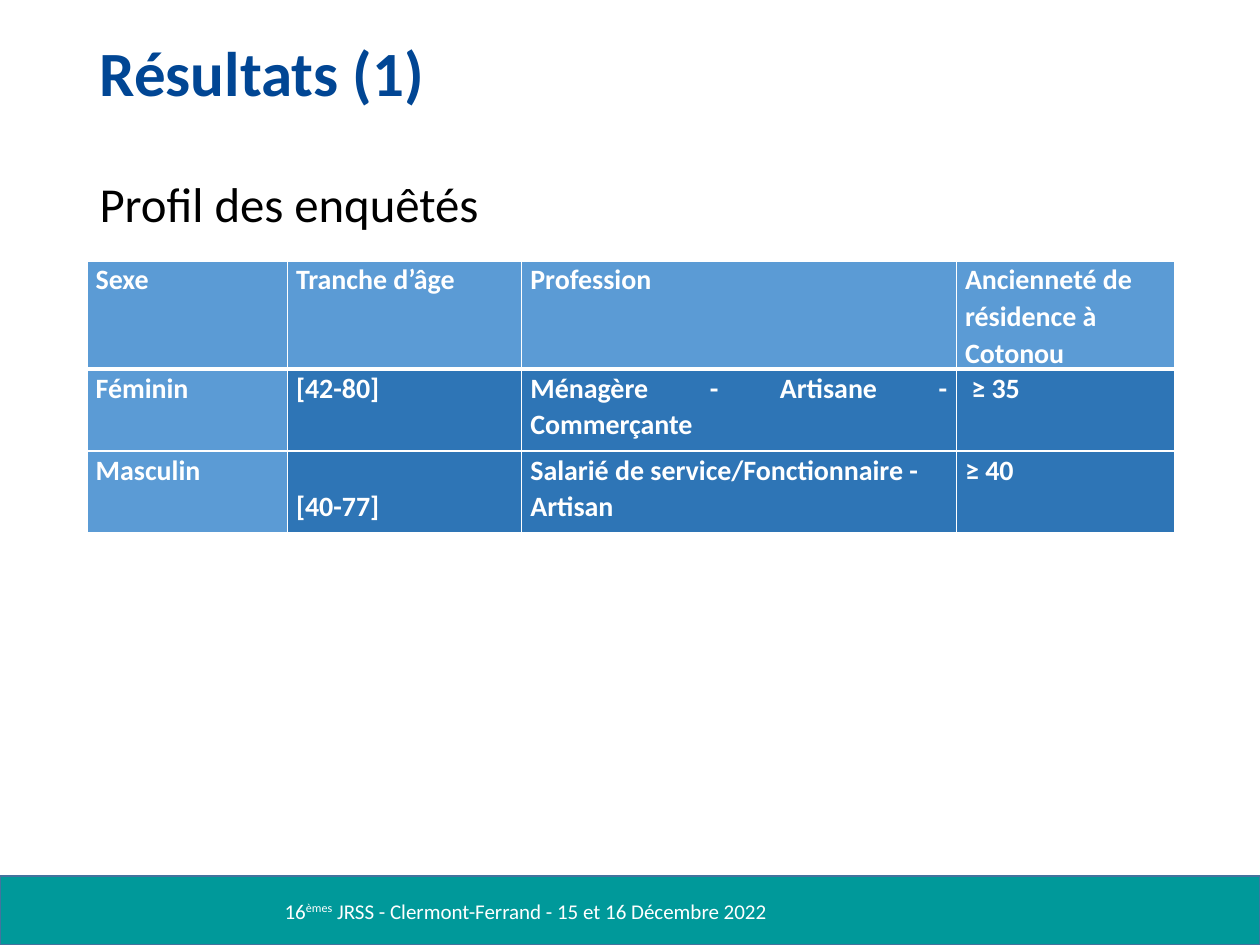
from dataclasses import dataclass

from lxml import etree
from pptx import Presentation
from pptx.dml.color import RGBColor as RGB
from pptx.enum.shapes import MSO_SHAPE as Shape
from pptx.enum.text import MSO_ANCHOR as Anchor, MSO_AUTO_SIZE as AutoSize, PP_ALIGN as Align
from pptx.oxml.ns import qn
from pptx.util import Inches, Pt


@dataclass(frozen=True)
class Theme:
    font: str = "Calibri"
    title: str = "014694"
    ink: str = "000000"
    white: str = "FFFFFF"
    band: str = "00999A"
    band_line: str = "43739E"
    header: str = "5B9BD5"
    body: str = "2E75B6"
    title_size: float = 36
    subtitle_size: float = 27.9
    table_size: float = 16
    footer_size: float = 12


class SlideBuilder:
    def __init__(self, slide, theme):
        self.slide = slide
        self.theme = theme

    def run(self, p, text, size, color, bold=False, superscript=False):
        r = p.add_run()
        r.text = text
        r.font.name = self.theme.font
        r.font.size = Pt(size)
        r.font.bold = bold
        r.font.color.rgb = RGB.from_string(color)
        if superscript:
            r._r.get_or_add_rPr().set("baseline", "30000")

    def band(self, x, y, w, h):
        sp = self.slide.shapes.add_shape(
            Shape.RECTANGLE, Inches(x), Inches(y), Inches(w), Inches(h))
        sp.shadow.inherit = False
        sp.fill.solid()
        sp.fill.fore_color.rgb = RGB.from_string(self.theme.band)
        sp.line.color.rgb = RGB.from_string(self.theme.band_line)
        sp.line.width = Pt(1)

    def footer(self, x, y, w, h, parts):
        tf = self.slide.shapes.add_textbox(
            Inches(x), Inches(y), Inches(w), Inches(h)).text_frame
        tf.word_wrap = True
        for text, superscript in parts:
            self.run(tf.paragraphs[0], text, self.theme.footer_size,
                     self.theme.white, superscript=superscript)

    def title(self, x, y, w, h, heading, subtitle):
        t = self.theme
        sp = self.slide.shapes.title
        sp.left, sp.top, sp.width, sp.height = map(Inches, (x, y, w, h))
        tf = sp.text_frame
        tf.auto_size = AutoSize.NONE
        tf.vertical_anchor = Anchor.MIDDLE
        p, sub = tf.paragraphs[0], tf.add_paragraph()
        self.run(p, heading, t.title_size, t.title, bold=True)
        self.run(sub, subtitle, t.subtitle_size, t.ink)
        sub.space_before = Pt(40)
        for para in (p, sub):
            para.alignment = Align.LEFT
            para.line_spacing = 0.9

    def border(self, cell, side, width):
        tc_pr = cell._tc.get_or_add_tcPr()
        ln = etree.SubElement(tc_pr, qn(f"a:ln{side}"), w=str(Pt(width)))
        fill = etree.SubElement(ln, qn("a:solidFill"))
        etree.SubElement(fill, qn("a:srgbClr"), val=self.theme.white)

    def cell(self, cell, text, fill, align, top_width, bottom_width):
        for side, width in (("L", 1), ("R", 1), ("T", top_width), ("B", bottom_width)):
            self.border(cell, side, width)
        cell.fill.solid()
        cell.fill.fore_color.rgb = RGB.from_string(fill)
        cell.margin_left = cell.margin_right = Inches(0.07)
        cell.margin_top = cell.margin_bottom = 0
        p = cell.text_frame.paragraphs[0]
        p.alignment = align
        p.line_spacing = 1.07
        self.run(p, text, self.theme.table_size, self.theme.white, bold=True)

    def table(self, x, y, widths, heights, rows, left_aligned):
        table = self.slide.shapes.add_table(
            len(rows), len(widths), Inches(x), Inches(y),
            Inches(sum(widths)), Inches(sum(heights))).table
        for col, width in zip(table.columns, widths):
            col.width = Inches(width)
        for row, height in zip(table.rows, heights):
            row.height = Inches(height)
        for i, row in enumerate(rows):
            for j, text in enumerate(row):
                self.cell(
                    table.cell(i, j), text,
                    self.theme.header if i == 0 or j == 0 else self.theme.body,
                    Align.LEFT if (i, j) in left_aligned else Align.JUSTIFY,
                    top_width=3 if i == 1 else 1,
                    bottom_width=3 if i == 0 else 1)
        return table


def main():
    prs = Presentation()
    prs.slide_width, prs.slide_height = Inches(10), Inches(7.5)
    page = SlideBuilder(prs.slides.add_slide(prs.slide_layouts[5]), Theme())

    # Footer band
    page.band(0, 6.95, 10, 0.55)
    page.footer(2.16, 7.08, 7.48, 0.3, [
        ("16", False),
        ("èmes", True),
        (" JRSS - Clermont-Ferrand - 15 et 16 Décembre 2022", False),
    ])

    # Title and subtitle
    page.title(0.69, 0.26, 8.62, 1.67, "Résultats (1)", "Profil des enquêtés")

    # Respondent profile
    rows = [
        ["Sexe", "Tranche d’âge", "Profession", "Ancienneté de résidence à Cotonou"],
        ["Féminin", "[42-80]", "Ménagère - Artisane - Commerçante", "≥ 35"],
        ["Masculin", "[40-77]", "Salarié de service/Fonctionnaire - Artisan", "≥ 40"],
    ]
    table = page.table(0.69, 2.07, [1.59, 1.86, 3.45, 1.73], [0.86, 0.65, 0.65],
                       rows, left_aligned={(0, 3), (2, 2)})
    table.cell(1, 3).margin_left = Inches(0.12)  # slight indent
    table.cell(2, 1).margin_top = Inches(0.29)  # one line down

    prs.save("out.pptx")


if __name__ == "__main__":
    main()
